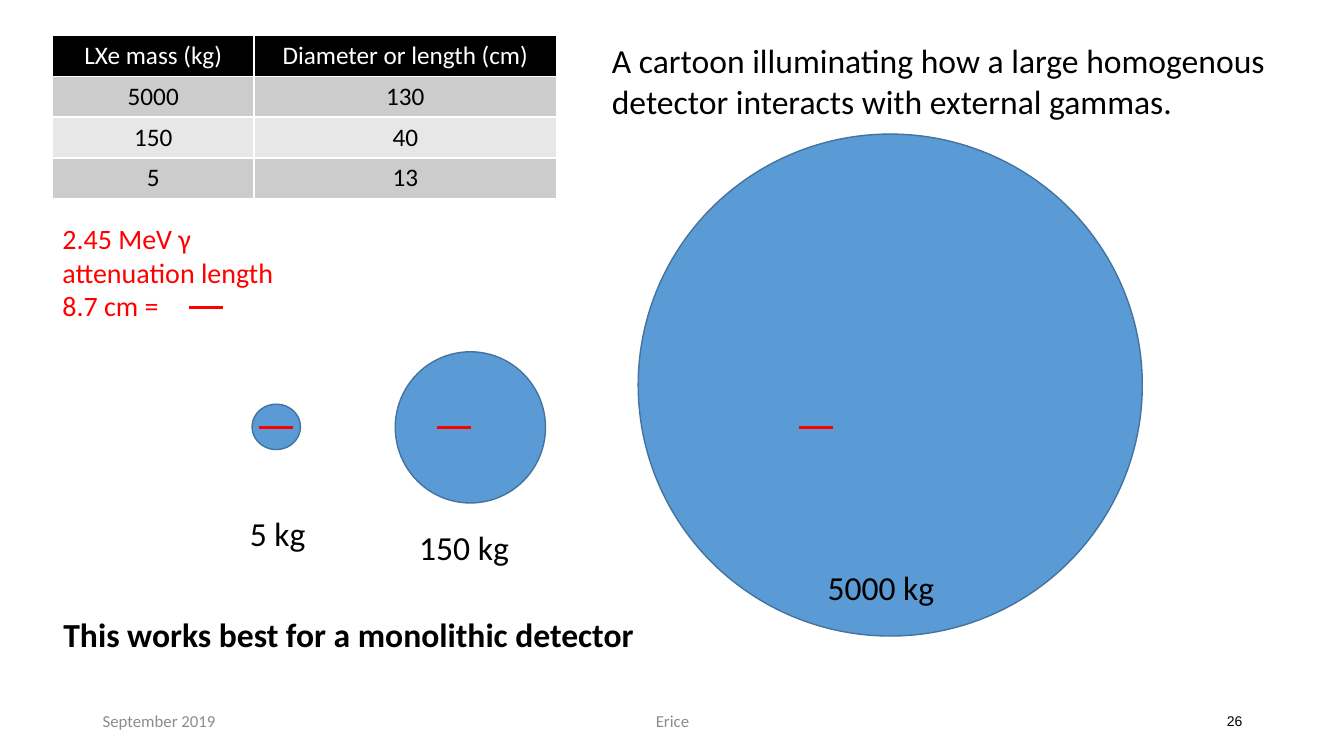
from lxml import etree
from pptx import Presentation
from pptx.dml.color import RGBColor
from pptx.enum import shapes, text
from pptx.oxml.ns import qn
from pptx.util import Inches, Pt

LEFT, CENTER, RIGHT = text.PP_ALIGN.LEFT, text.PP_ALIGN.CENTER, text.PP_ALIGN.RIGHT
TOP, MIDDLE = text.MSO_ANCHOR.TOP, text.MSO_ANCHOR.MIDDLE


def color(hex_value):
    return RGBColor.from_string(hex_value)


def write(frame, content, size=24, font="Calibri", fill="000000", bold=False,
          align=LEFT, anchor=TOP, wrap=True):
    """Fill a text frame, one paragraph per line of content."""
    frame.word_wrap = wrap
    frame.vertical_anchor = anchor
    frame.text = content
    for paragraph in frame.paragraphs:
        paragraph.alignment = align
        paragraph.font.size = Pt(size)
        paragraph.font.name = font
        paragraph.font.bold = bold
        paragraph.font.color.rgb = color(fill)


presentation = Presentation()
presentation.slide_width = Inches(13.33)
presentation.slide_height = Inches(7.5)
slide = presentation.slides.add_slide(presentation.slide_layouts[6])

# Detector sizes
rows = [
    ("LXe mass (kg)", "Diameter or length (cm)"),
    ("5000", "130"),
    ("150", "40"),
    ("5", "13"),
]
row_fills = ["000000", "CCCCCC", "E7E7E7", "CCCCCC"]
table = slide.shapes.add_table(
    len(rows), 2, Inches(0.52), Inches(0.35), Inches(5), Inches(1.62)).table
table.columns[0].width = Inches(2)
table.columns[1].width = Inches(3)
for row_index, (values, row_fill) in enumerate(zip(rows, row_fills)):
    for column_index, value in enumerate(values):
        cell = table.cell(row_index, column_index)
        write(cell.text_frame, value, size=18, align=CENTER,
              fill="FFFFFF" if row_index == 0 else "000000")
        properties = cell._tc.get_or_add_tcPr()
        for side in ("a:lnL", "a:lnR", "a:lnT", "a:lnB"):
            border = etree.SubElement(properties, qn(side), w=str(Pt(1)))
            solid = etree.SubElement(border, qn("a:solidFill"))
            etree.SubElement(solid, qn("a:srgbClr"), val="FFFFFF")
        cell.fill.solid()
        cell.fill.fore_color.rgb = color(row_fill)

# Detectors drawn to scale
detectors = [
    (6.33, 1.33, 5, 4.98),
    (3.92, 3.49, 1.49, 1.5),
    (2.5, 4.01, 0.48, 0.45),
]
for box in detectors:
    detector = slide.shapes.add_shape(
        shapes.MSO_SHAPE.OVAL, *[Inches(length) for length in box])
    detector.shadow.inherit = False
    detector.fill.solid()
    detector.fill.fore_color.rgb = color("5B9BD5")
    detector.line.color.rgb = color("43739E")
    detector.line.width = Pt(1)

# Attenuation length: the legend bar and one bar in each detector
for left, top in [(1.87, 3.05), (2.57, 4.24), (4.33, 4.24), (7.92, 4.24)]:
    bar = slide.shapes.add_connector(
        shapes.MSO_CONNECTOR.STRAIGHT,
        Inches(left), Inches(top), Inches(left + 0.34), Inches(top))
    bar.line.color.rgb = color("FF0000")
    bar.line.width = Pt(2)
    etree.SubElement(bar._element.spPr, qn("a:effectLst"))

footer = dict(size=12, fill="8C8C8C", anchor=MIDDLE)
labels = [
    ((5.97, 0.35, 7.19, 0.91),
     "A cartoon illuminating how a large homogenous detector interacts "
     "with external gammas.", {}),
    ((0.52, 2.15, 2.64, 1.11), "2.45 MeV γ\nattenuation length\n8.7 cm =",
     dict(size=20, fill="FF0000")),
    ((2.38, 5.04, 0.76, 0.5), "5 kg", dict(wrap=False)),
    ((4.06, 5.18, 1.1, 0.5), "150 kg", dict(wrap=False)),
    ((8.11, 5.58, 1.27, 0.5), "5000 kg", dict(wrap=False)),
    ((0.53, 6.04, 5.91, 0.5), "This works best for a monolithic detector",
     dict(bold=True, wrap=False)),
    ((0.92, 6.95, 3, 0.4), "September 2019", footer),
    ((4.42, 6.95, 4.5, 0.4), "Erice", dict(footer, align=CENTER)),
    ((9.42, 6.95, 3, 0.4), "26",
     dict(size=10, font="Arial", align=RIGHT, anchor=MIDDLE)),
]
for box, content, style in labels:
    label = slide.shapes.add_textbox(*[Inches(length) for length in box])
    write(label.text_frame, content, **style)

presentation.save("out.pptx")
